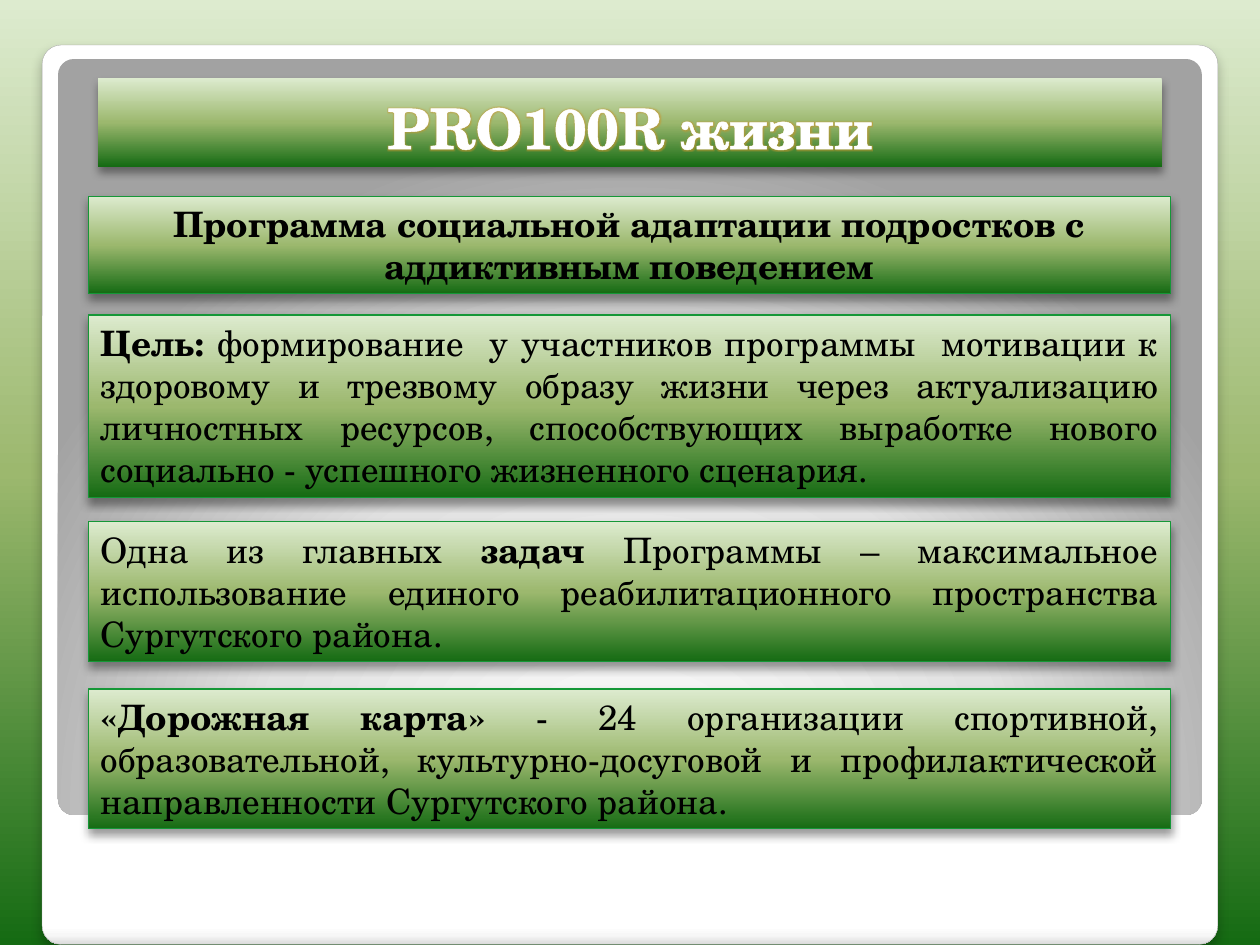
import pptx
import pptx.dml.color
import pptx.enum.shapes
import pptx.enum.text
import pptx.oxml
import pptx.oxml.ns
import pptx.util

Cm, Pt = pptx.util.Cm, pptx.util.Pt
ALIGN = pptx.enum.text.PP_ALIGN
SHAPE = pptx.enum.shapes.MSO_SHAPE
qn = pptx.oxml.ns.qn
NS = pptx.oxml.ns.nsdecls("a")

FONT = "TeX Gyre Schola"
GREEN = [(0, "DDEBCF"), (50, "9CB86E"), (100, "156B13")]
WHITE = [(0, "FFFFFF"), (98, "FFFFFF"), (99, "F7F7F7"), (100, "DADADA")]
GREY = [(0, "FFFFFF"), (55, "E1E1E1"), (100, "A2A2A2")]

LEFT, WIDTH = 1.78, 21.82
# top, height, alignment, runs as (text, bold)
BLOCKS = [
    (3.96, 1.96, ALIGN.CENTER, [
        ("Программа социальной адаптации подростков с аддиктивным поведением", True)]),
    (6.35, 3.68, ALIGN.JUSTIFY, [
        ("Цель: ", True),
        ("формирование  у участников программы  мотивации к здоровому и трезвому "
         "образу жизни через актуализацию личностных ресурсов, способствующих "
         "выработке нового социально - успешного жизненного сценария.", False)]),
    (10.52, 2.82, ALIGN.JUSTIFY, [
        ("Одна из главных ", False),
        ("задач", True),
        (" Программы – максимальное использование единого реабилитационного "
         "пространства Сургутского района.", False)]),
    (13.89, 2.82, ALIGN.JUSTIFY, [
        ("«Дорожная карта» ", True),
        ("- 24 организации спортивной, образовательной, культурно-досуговой и "
         "профилактической направленности Сургутского района.", False)]),
]


def color(value):
    return pptx.dml.color.RGBColor.from_string(value)


def gradient(fill, element, stops):
    """Fill from top to bottom and return the a:gradFill found in element."""
    fill.gradient()
    fill.gradient_angle = 270
    grad = next(element.iter(qn("a:gradFill")))
    stop_list = grad.find(qn("a:gsLst"))
    for stop in list(stop_list):
        stop_list.remove(stop)
    for position, value in stops:
        stop_list.append(pptx.oxml.parse_xml(
            f'<a:gs {NS} pos="{position * 1000}"><a:srgbClr val="{value}"/></a:gs>'))
    return grad


def shadow(sp, alpha, blur, distance):
    sp.shadow.inherit = False
    effects = sp._element.spPr.find(qn("a:effectLst"))
    effects.append(pptx.oxml.parse_xml(
        f'<a:outerShdw {NS} blurRad="{Pt(blur)}" dist="{Pt(distance)}" dir="5400000" '
        f'rotWithShape="0"><a:srgbClr val="000000"><a:alpha val="{alpha * 1000}"/>'
        '</a:srgbClr></a:outerShdw>'))


def rounded(s, left, top, width, height):
    sp = s.shapes.add_shape(SHAPE.ROUNDED_RECTANGLE,
                            Cm(left), Cm(top), Cm(width), Cm(height))
    sp.adjustments[0] = 0.021
    return sp


def add_frame(s, left, top, width, height):
    """White card with a grey panel inside it."""
    card = rounded(s, left, top, width, height)
    gradient(card.fill, card._element, WHITE)
    card.line.color.rgb = color("A4A4A4")
    card.line.width = Pt(0.16)
    shadow(card, 25, 6, 4)

    inset = 0.32
    panel = rounded(s, left + inset, top + 0.28, width - 2 * inset, 15.24)
    grad = gradient(panel.fill, panel._element, GREY)
    grad.remove(grad.find(qn("a:lin")))
    grad.append(pptx.oxml.parse_xml(
        f'<a:path {NS} path="circle"><a:fillToRect l="50000" t="175000" '
        'r="50000" b="-75000"/></a:path>'))
    panel.line.fill.background()
    panel.shadow.inherit = False


def add_title(s, left, top, width, height, text):
    sp = s.shapes.title
    s.shapes._spTree.append(sp._element)  # in front of the frame
    sp.left, sp.top, sp.width, sp.height = Cm(left), Cm(top), Cm(width), Cm(height)
    gradient(sp.fill, sp._element, GREEN)
    shadow(sp, 40, 5.2, 3)

    tf = sp.text_frame
    tf.vertical_anchor = pptx.enum.text.MSO_ANCHOR.BOTTOM
    p = tf.paragraphs[0]
    p.alignment = ALIGN.CENTER
    p.font.name, p.font.size, p.font.bold = FONT, Pt(32), True
    r = p.add_run()
    r.text = text
    r.font.color.rgb = color("FFFFFF")
    props = r.font._element if hasattr(r.font, "_element") else r._r.get_or_add_rPr()
    props.insert(0, pptx.oxml.parse_xml(
        f'<a:ln {NS} w="{Pt(0.75)}"><a:solidFill><a:srgbClr val="FFFFFF"/>'
        '</a:solidFill></a:ln>'))
    props.append(pptx.oxml.parse_xml(
        f'<a:effectLst {NS}><a:glow rad="{Pt(2)}"><a:srgbClr val="C8962E">'
        '<a:alpha val="60000"/></a:srgbClr></a:glow></a:effectLst>'))


def add_block(s, left, top, width, height, alignment, runs):
    sp = s.shapes.add_shape(SHAPE.RECTANGLE, Cm(left), Cm(top), Cm(width), Cm(height))
    gradient(sp.fill, sp._element, GREEN)
    sp.line.color.rgb = color("159737")
    sp.line.width = Pt(0.75)
    shadow(sp, 40, 5.2, 3)

    tf = sp.text_frame
    tf.word_wrap = True
    tf.auto_size = pptx.enum.text.MSO_AUTO_SIZE.SHAPE_TO_FIT_TEXT
    tf.vertical_anchor = pptx.enum.text.MSO_ANCHOR.TOP
    p = tf.paragraphs[0]
    p.alignment = alignment
    p.font.name, p.font.size = FONT, Pt(20)
    p.font.color.rgb = color("000000")
    for text, bold in runs:
        r = p.add_run()
        r.text = text
        r.font.bold = bold


def main():
    prs = pptx.Presentation()
    prs.slide_width, prs.slide_height = Cm(25.4), Cm(19.05)
    s = prs.slides.add_slide(prs.slide_layouts[5])
    gradient(s.background.fill, s._element, GREEN)
    add_frame(s, 0.85, 0.91, 23.7, 18.13)
    add_title(s, 1.98, 1.57, 21.44, 1.79, "PRO100R жизни")
    for top, height, alignment, runs in BLOCKS:
        add_block(s, LEFT, top, WIDTH, height, alignment, runs)
    prs.save("out.pptx")


if __name__ == "__main__":
    main()
